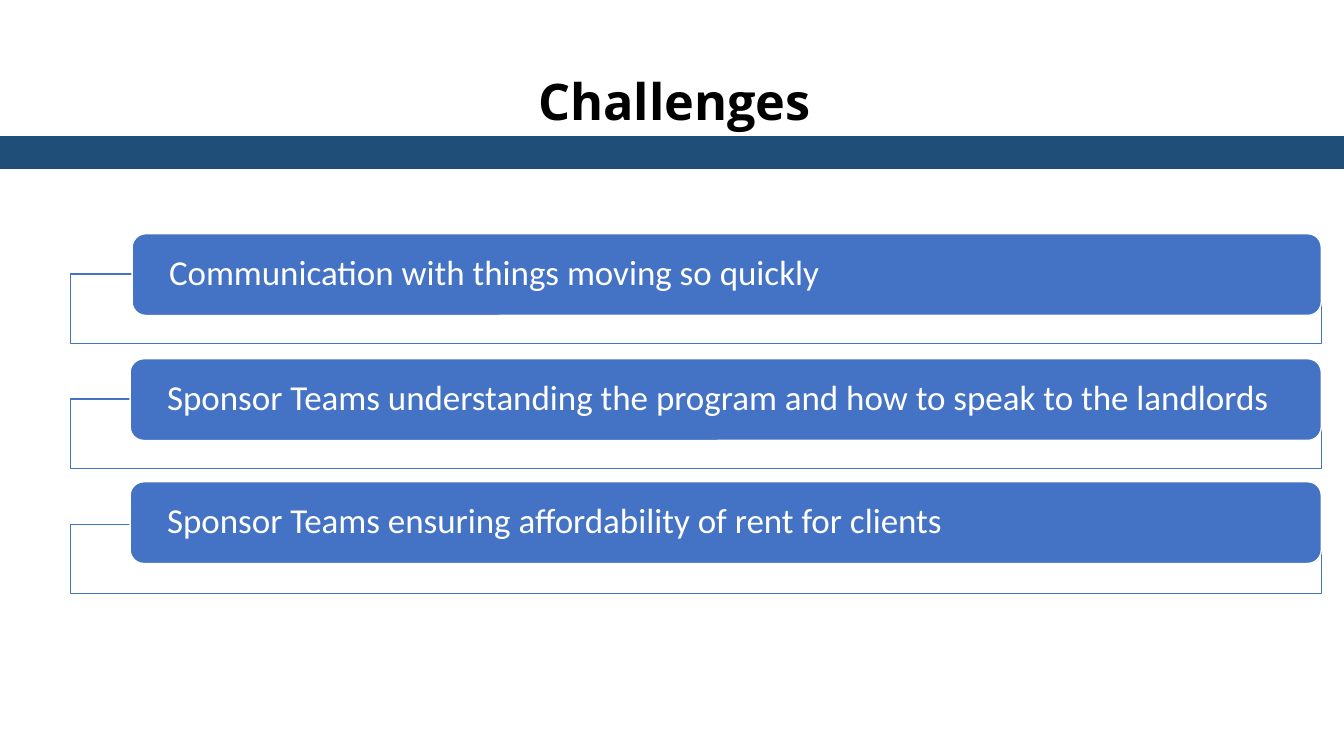
import pptx
import pptx.util
import pptx.dml.color
import pptx.enum.shapes
import pptx.enum.text
import pptx.oxml.ns
import lxml.etree

Cm, Pt = pptx.util.Cm, pptx.util.Pt
Kind = pptx.enum.shapes.MSO_SHAPE
Align = pptx.enum.text.PP_ALIGN
Anchor = pptx.enum.text.MSO_ANCHOR

# Content
TITLE = "Challenges"
ITEMS = [  # text, left and top of the bar in cm
    ("Communication with things moving so quickly", 3.33, 5.89),
    ("Sponsor Teams understanding the program and how to speak to the landlords", 3.28, 9.04),
    ("Sponsor Teams ensuring affordability of rent for clients", 3.28, 12.14),
]
COLORS = {"navy": "1F4E79", "blue": "4472C4", "white": "FFFFFF", "black": "000000"}

# Layout in cm
WIDE, HIGH = 33.87, 19.05
LEFT, RIGHT = 1.78, 33.3
TOP, STEP = 6.91, 3.15
FRAME, BAR = 1.75, 2.06


def color(name):
    return pptx.dml.color.RGBColor.from_string(COLORS[name])


def add_box(slide, kind, left, top, width, height, fill, line, alpha=None):
    box = slide.shapes.add_shape(kind, Cm(left), Cm(top), Cm(width), Cm(height))
    box.shadow.inherit = False
    box.fill.solid()
    box.fill.fore_color.rgb = color(fill)
    box.line.color.rgb = color(line)
    box.line.width = Pt(1)
    if alpha:
        tint = box.fill._xPr.find(".//" + pptx.oxml.ns.qn("a:srgbClr"))
        lxml.etree.SubElement(tint, pptx.oxml.ns.qn("a:alpha"), val=str(alpha * 1000))
    return box


def set_text(shape, text, font, size, tone, bold=False, align=Align.LEFT,
             anchor=Anchor.TOP, side=0.25, edge=0.13, space=1.0):
    frame = shape.text_frame
    frame.word_wrap = True
    frame.vertical_anchor = anchor
    frame.margin_left = frame.margin_right = Cm(side)
    frame.margin_top = frame.margin_bottom = Cm(edge)
    para = frame.paragraphs[0]
    para.alignment = align
    para.line_spacing = space
    run = para.add_run()
    run.text = text
    run.font.name = font
    run.font.size = Pt(size)
    run.font.bold = bold
    run.font.color.rgb = color(tone)


def main():
    deck = pptx.Presentation()
    deck.slide_width, deck.slide_height = Cm(WIDE), Cm(HIGH)
    slide = deck.slides.add_slide(deck.slide_layouts[6])

    # Title and band
    title = slide.shapes.add_textbox(Cm(1.47), Cm(1.63), Cm(31.06), Cm(3.68))
    set_text(title, TITLE, "Open Sans", 36, "black", bold=True, align=Align.CENTER)
    add_box(slide, Kind.RECTANGLE, 0, 3.45, WIDE, 0.79, "navy", "navy")

    # Challenge list: a frame behind each bar
    for row, (text, left, top) in enumerate(ITEMS):
        add_box(slide, Kind.RECTANGLE, LEFT, TOP + row * STEP, RIGHT - LEFT, FRAME,
                "white", "blue", alpha=90)
        bar = add_box(slide, Kind.ROUNDED_RECTANGLE, left, top, RIGHT - left, BAR,
                      "blue", "white")
        set_text(bar, text, "Calibri", 25, "white", anchor=Anchor.MIDDLE,
                 side=0.83, edge=0, space=0.9)

    deck.save("out.pptx")


if __name__ == "__main__":
    main()
